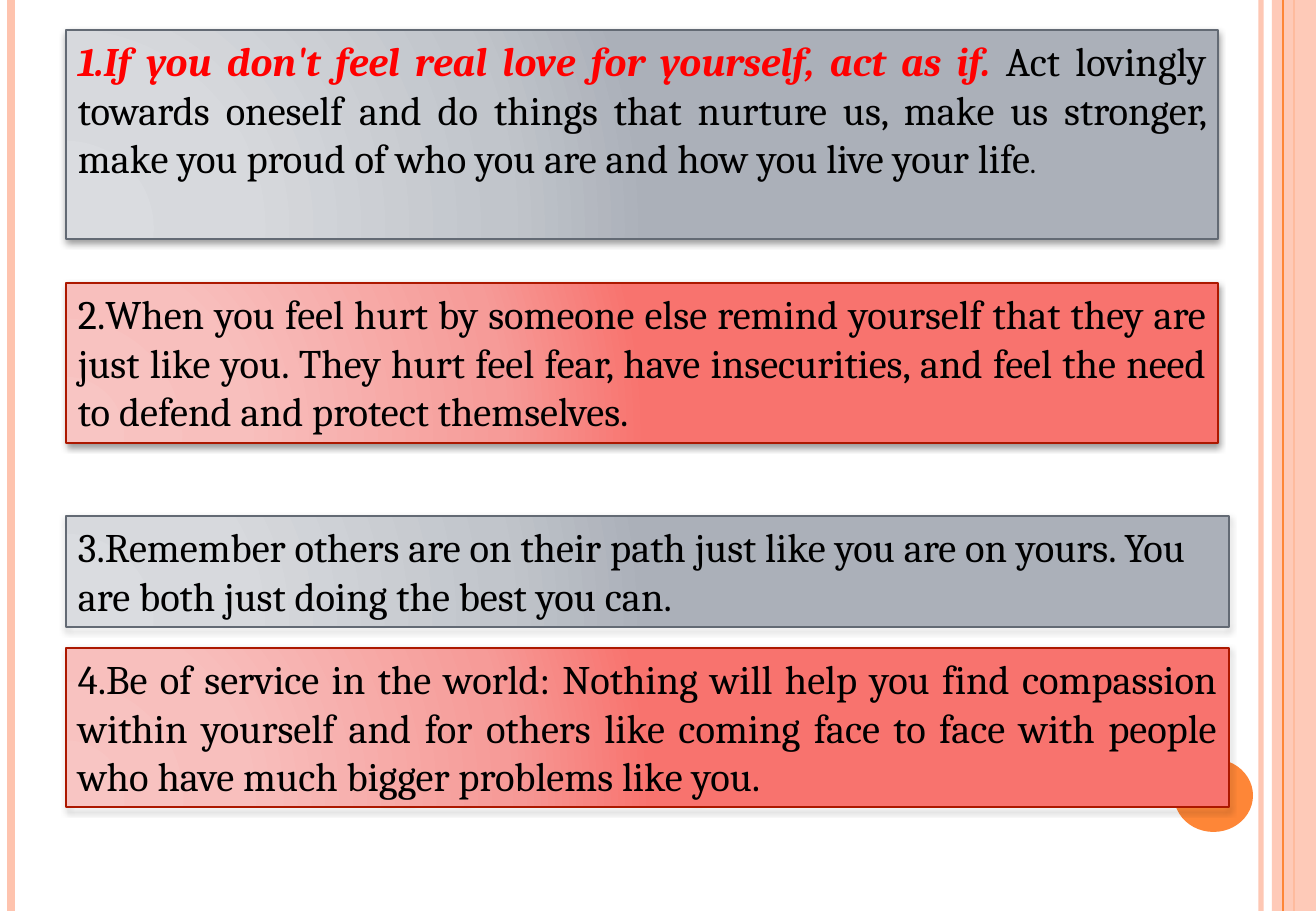
"""Builds a slide of four self-love tips in shaded boxes."""
from lxml import etree
from pptx import Presentation
from pptx.dml.color import RGBColor
from pptx.enum.shapes import MSO_CONNECTOR, MSO_SHAPE
from pptx.enum.text import MSO_ANCHOR, PP_ALIGN
from pptx.oxml import parse_xml
from pptx.oxml.ns import nsdecls, qn
from pptx.util import Pt

RECT, OVAL = MSO_SHAPE.RECTANGLE, MSO_SHAPE.OVAL
STRAIGHT = MSO_CONNECTOR.STRAIGHT
TOP, LEFT, JUSTIFY = MSO_ANCHOR.TOP, PP_ALIGN.LEFT, PP_ALIGN.JUSTIFY
PX = 914400 / 121.5
WIDE, HIGH = 1316, 911
FONT, SIZE, INK = "Cambria", 24, "000000"
PEACH, ORANGE, RED = "FEC3AE", "FE8637", "FF0000"
STOPS = (0, 30, 75, 100)
GRAY = (("DADCE0", "D7D9DD", "C1C5CB", "ABB0B9"), "636A74")
ROSE = (("F8C5C3", "F8BFBD", "F69B98", "F8736E"), "AC1800")
MARGIN = 66

RULES = [(1261, PEACH, 3, 93), (11, PEACH, 4.5, 100), (1294, ORANGE, 1.5, 100)]
BAND = (1272, 0, 44, HIGH)
INNER = (1283, ORANGE, 0.75, 100)
DOT = (1174, 759, 79, 73)

TIPS = [
    (30, 1152, 209, GRAY, JUSTIFY, [
        ("1.If you don't feel real love for yourself, act as if. ", SIZE, RED, True),
        ("Act lovingly towards oneself and do things that nurture us, make us "
         "stronger, make you proud of who you are and how you live your life",
         SIZE, INK, False),
        (".", 18, INK, False)]),
    (283, 1152, 160, ROSE, JUSTIFY, [
        ("2.When you feel hurt by someone else remind yourself that they are "
         "just like you. They hurt feel fear, have insecurities, and feel the "
         "need to defend and protect themselves.", SIZE, INK, False)]),
    (516, 1163, 111, GRAY, LEFT, [
        ("3.Remember others are on their path just like you are on yours. You "
         "are both just doing the best you can.", SIZE, INK, False)]),
    (648, 1163, 159, ROSE, JUSTIFY, [
        ("4.Be of service in the world: Nothing will help you find compassion "
         "within yourself and for others like coming face to face with people "
         "who have much bigger problems like you.", SIZE, INK, False)]),
]


def px(*sizes):
    return [round(size * PX) for size in sizes]


def color(code):
    return RGBColor.from_string(code)


def fade(item, percent):
    tint = next(item._element.spPr.iter(qn("a:srgbClr")))
    etree.SubElement(tint, qn("a:alpha")).set("val", str(percent * 1000))


def add_rule(slide, x, code, width, percent):
    rule = slide.shapes.add_connector(STRAIGHT, *px(x, 0, x, HIGH))
    rule.line.color.rgb = color(code)
    rule.line.width = Pt(width)
    if percent < 100:
        fade(rule, percent)
    etree.SubElement(rule._element.spPr, qn("a:effectLst"))


def add_plain(slide, kind, place, code):
    shape = slide.shapes.add_shape(kind, *px(*place))
    shape.shadow.inherit = False
    shape.fill.solid()
    shape.fill.fore_color.rgb = color(code)
    shape.line.fill.background()
    return shape


def shade(box, tints):
    stops = "".join(
        f'<a:gs pos="{stop * 1000}"><a:srgbClr val="{tint}"/></a:gs>'
        for stop, tint in zip(STOPS, tints))
    fill = parse_xml(
        f'<a:gradFill {nsdecls("a")} rotWithShape="1"><a:gsLst>{stops}</a:gsLst>'
        '<a:path path="circle"><a:fillToRect l="5000" t="100000" r="120000" '
        'b="10000"/></a:path></a:gradFill>')
    box._element.spPr.find(qn("a:prstGeom")).addnext(fill)


def add_shadow(box):
    box.shadow.inherit = False
    box._element.spPr.find(qn("a:effectLst")).append(parse_xml(
        f'<a:outerShdw {nsdecls("a")} blurRad="{Pt(4)}" dist="{Pt(2)}" '
        'dir="5400000" rotWithShape="0"><a:srgbClr val="000000">'
        '<a:alpha val="40000"/></a:srgbClr></a:outerShdw>'))


def add_tip(slide, top, width, height, theme, align, parts):
    tints, edge = theme
    box = slide.shapes.add_shape(RECT, *px(MARGIN, top, width, height))
    shade(box, tints)
    box.line.color.rgb = color(edge)
    box.line.width = Pt(1)
    add_shadow(box)
    frame = box.text_frame
    frame.word_wrap = True
    frame.vertical_anchor = TOP
    para = frame.paragraphs[0]
    para.alignment = align
    para.font.name = FONT
    for text, size, code, strong in parts:
        run = para.add_run()
        run.text = text
        run.font.size = Pt(size)
        run.font.color.rgb = color(code)
        run.font.bold = run.font.italic = strong


def main():
    deck = Presentation()
    deck.slide_width, deck.slide_height = px(WIDE, HIGH)
    slide = deck.slides.add_slide(deck.slide_layouts[6])
    for rule in RULES:
        add_rule(slide, *rule)
    fade(add_plain(slide, RECT, BAND, PEACH), 87)
    add_rule(slide, *INNER)
    add_plain(slide, OVAL, DOT, ORANGE)
    for tip in TIPS:
        add_tip(slide, *tip)
    deck.save("out.pptx")


if __name__ == "__main__":
    main()
